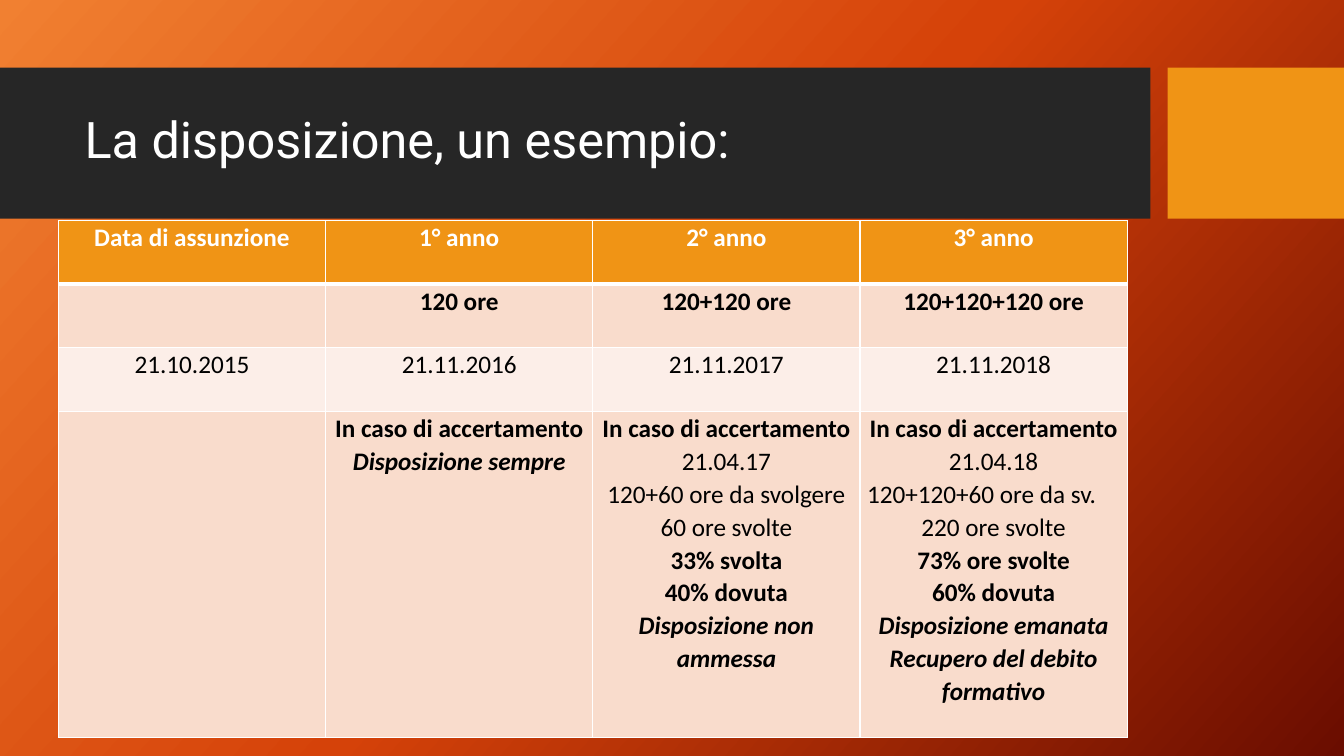
from lxml.etree import SubElement
from pptx import Presentation
from pptx.dml.color import RGBColor
from pptx.enum.shapes import MSO_SHAPE
from pptx.enum.text import MSO_ANCHOR, PP_ALIGN
from pptx.oxml import parse_xml
from pptx.oxml.ns import nsdecls, qn
from pptx.util import Inches, Pt

WHITE = RGBColor(0xFF, 0xFF, 0xFF)
BLACK = RGBColor(0x00, 0x00, 0x00)
CHARCOAL = RGBColor(0x26, 0x26, 0x26)
ORANGE = RGBColor(0xF0, 0x94, 0x15)
PEACH = RGBColor(0xF9, 0xDC, 0xCC)
PALE_PEACH = RGBColor(0xFC, 0xEE, 0xE8)
BACKGROUND_STOPS = [
    (0, RGBColor(0xF1, 0x80, 0x31)),
    (50, RGBColor(0xD5, 0x42, 0x09)),
    (100, RGBColor(0x6A, 0x0D, 0x00)),
]

PLAIN, BOLD, BOLD_ITALIC = (False, False), (True, False), (True, True)
CHECK = ("In caso di accertamento", BOLD)
LEFT_LINE = "120+120+60 ore da sv."

ROW_HEIGHTS = [0.63, 0.63, 0.63, 3.24]
ROW_FILLS = [ORANGE, PEACH, PALE_PEACH, PEACH]
ROWS = [
    [[(text, BOLD)] for text in ("Data di assunzione", "1° anno", "2° anno", "3° anno")],
    [[], [("120 ore", BOLD)], [("120+120 ore", BOLD)], [("120+120+120 ore", BOLD)]],
    [[(text, PLAIN)] for text in ("21.10.2015", "21.11.2016", "21.11.2017", "21.11.2018")],
    [
        [],
        [CHECK, ("Disposizione sempre", BOLD_ITALIC)],
        [
            CHECK,
            ("21.04.17", PLAIN),
            ("120+60 ore da svolgere", PLAIN),
            ("60 ore svolte", PLAIN),
            ("33% svolta", BOLD),
            ("40% dovuta", BOLD),
            ("Disposizione non ammessa", BOLD_ITALIC),
        ],
        [
            CHECK,
            ("21.04.18", PLAIN),
            (LEFT_LINE, PLAIN),
            ("220 ore svolte", PLAIN),
            ("73% ore svolte", BOLD),
            ("60% dovuta", BOLD),
            ("Disposizione emanata", BOLD_ITALIC),
            ("Recupero del debito formativo", BOLD_ITALIC),
        ],
    ],
]


class SlideBuilder:
    title_font = "Roboto"
    table_font = "Calibri"

    def __init__(self, slide):
        self.slide = slide

    def background(self, stops, angle):
        fill = self.slide.background.fill
        fill.gradient()
        fill.gradient_angle = 360 - angle
        stop_list = self.slide.element.find(".//" + qn("a:gsLst"))
        for stop in list(stop_list):
            stop_list.remove(stop)
        for percent, color in stops:
            stop = SubElement(stop_list, qn("a:gs"), pos=str(percent * 1000))
            SubElement(stop, qn("a:srgbClr"), val=str(color))

    def block(self, left, top, width, height, color):
        shape = self.slide.shapes.add_shape(
            MSO_SHAPE.RECTANGLE, Inches(left), Inches(top), Inches(width), Inches(height))
        shape.shadow.inherit = False
        shape.fill.solid()
        shape.fill.fore_color.rgb = color
        shape.line.fill.background()

    def title(self, text, left, top, width, height):
        frame = self.slide.shapes.add_textbox(
            Inches(left), Inches(top), Inches(width), Inches(height)).text_frame
        frame.word_wrap = True
        frame.vertical_anchor = MSO_ANCHOR.MIDDLE
        paragraph = frame.paragraphs[0]
        paragraph.text = text
        paragraph.line_spacing = 0.9
        self.set_font(paragraph.font, self.title_font, 36, WHITE)

    def table(self, left, top, column_width):
        columns = len(ROWS[0])
        table = self.slide.shapes.add_table(
            len(ROWS), columns, Inches(left), Inches(top),
            Inches(column_width * columns), Inches(sum(ROW_HEIGHTS))).table
        for column in table.columns:
            column.width = Inches(column_width)
        for index, (row, height) in enumerate(zip(table.rows, ROW_HEIGHTS)):
            row.height = Inches(height)
            for cell, lines in zip(row.cells, ROWS[index]):
                cell.fill.solid()
                cell.fill.fore_color.rgb = ROW_FILLS[index]
                self.borders(cell, top=3 if index == 1 else 1, bottom=3 if index == 0 else 1)
                self.cell_text(cell, lines, WHITE if index == 0 else BLACK)

    def borders(self, cell, top, bottom):
        properties = cell._tc.get_or_add_tcPr()
        widths = [("lnL", 1), ("lnR", 1), ("lnT", top), ("lnB", bottom)]
        for position, (tag, points) in enumerate(widths):
            properties.insert(position, parse_xml(
                f'<a:{tag} {nsdecls("a")} w="{Pt(points)}"><a:solidFill>'
                f'<a:srgbClr val="{WHITE}"/></a:solidFill></a:{tag}>'))

    def cell_text(self, cell, lines, color):
        cell.margin_left = cell.margin_right = Inches(0.07)
        cell.margin_top = cell.margin_bottom = 0
        frame = cell.text_frame
        for index, (text, (bold, italic)) in enumerate(lines):
            paragraph = frame.add_paragraph() if index else frame.paragraphs[0]
            paragraph.text = text
            paragraph.alignment = PP_ALIGN.LEFT if text == LEFT_LINE else PP_ALIGN.CENTER
            paragraph.line_spacing = 1.07
            self.set_font(paragraph.font, self.table_font, 18, color, bold, italic)

    def set_font(self, font, name, size, color, bold=False, italic=False):
        font.name = name
        font.size = Pt(size)
        font.color.rgb = color
        font.bold = bold
        font.italic = italic


def main():
    presentation = Presentation()
    presentation.slide_width = Inches(13.33)
    presentation.slide_height = Inches(7.5)
    builder = SlideBuilder(presentation.slides.add_slide(presentation.slide_layouts[6]))
    builder.background(BACKGROUND_STOPS, angle=42)
    builder.block(0, 0.67, 11.41, 1.5, CHARCOAL)
    builder.block(11.58, 0.67, 1.75, 1.5, ORANGE)
    builder.title("La disposizione, un esempio:", 0.74, 0.82, 10.51, 1.18)
    builder.table(0.58, 2.19, column_width=2.65)
    presentation.save("out.pptx")


if __name__ == "__main__":
    main()
